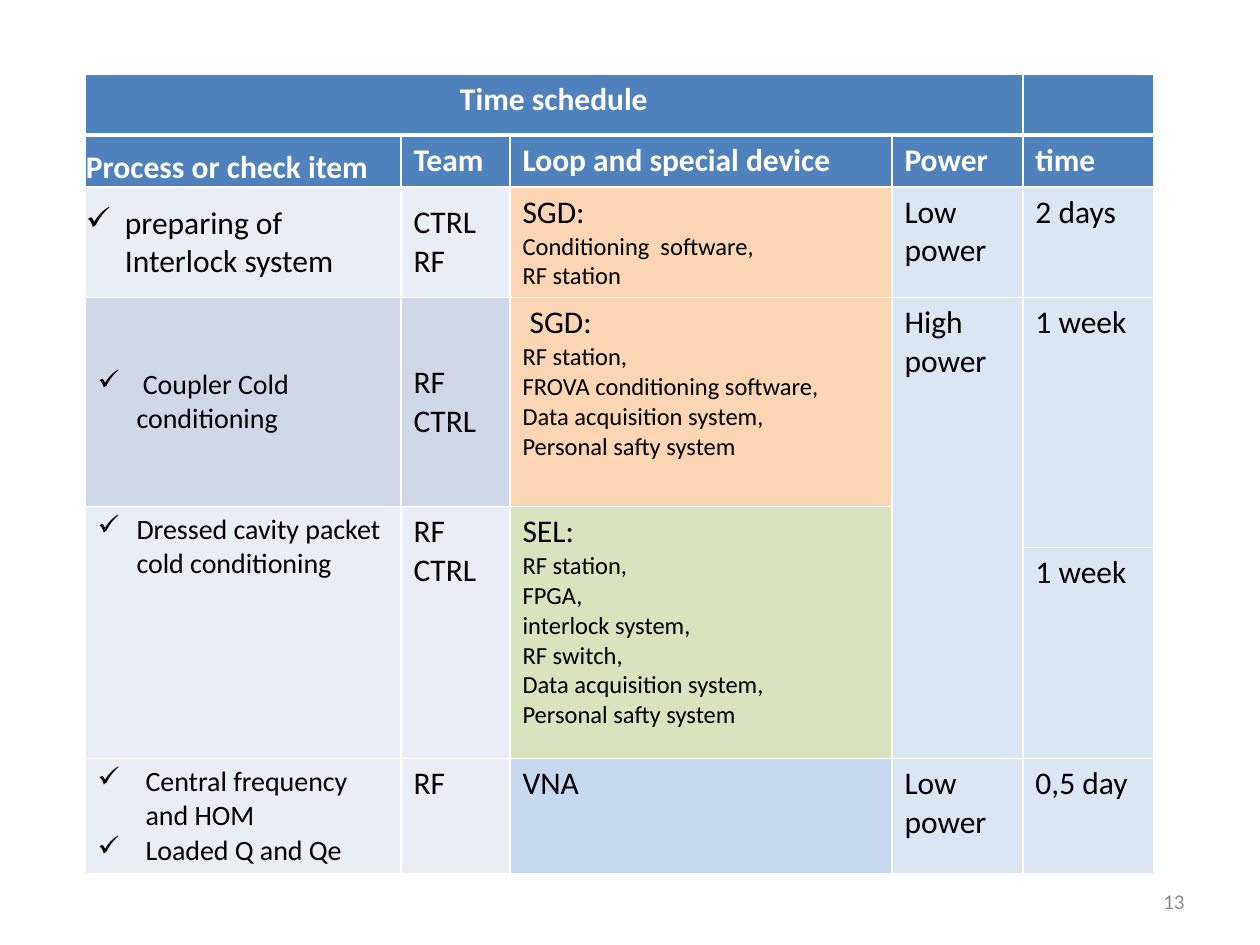
import pptx
import pptx.dml.color
import pptx.enum.text
import pptx.oxml
import pptx.oxml.ns
import pptx.util
from dataclasses import dataclass

PX = 914400 // 126
TOP, MID, BASE = (pptx.enum.text.MSO_ANCHOR.TOP, pptx.enum.text.MSO_ANCHOR.MIDDLE,
                  pptx.enum.text.MSO_ANCHOR.BOTTOM)
LEFT, MIDX, RIGHT = (pptx.enum.text.PP_ALIGN.LEFT, pptx.enum.text.PP_ALIGN.CENTER,
                     pptx.enum.text.PP_ALIGN.RIGHT)


@dataclass
class Theme:
    font: str = "Calibri"
    white: str = "FFFFFF"
    black: str = "000000"
    gray: str = "8C8C8C"
    head: str = "4F81BD"
    pale: str = "E9EDF4"
    band: str = "D0D8E8"
    peach: str = "FCD5B5"
    green: str = "D7E4BD"
    sky: str = "C6D9F1"
    ice: str = "DCE6F2"
    large: int = 18
    medium: int = 16
    small: int = 14
    tiny: int = 12


theme = Theme()


def write(frame, text, size=theme.large, rest=None, color=theme.black,
          bold=False, align=LEFT, hang=0):
    frame.word_wrap = True
    for i, line in enumerate(text.split("\n")):
        para = frame.paragraphs[0] if i == 0 else frame.add_paragraph()
        para.alignment = align
        run = para.add_run()
        run.text = line
        run.font.name = theme.font
        run.font.size = pptx.util.Pt(rest if rest and i else size)
        run.font.bold = bold
        run.font.color.rgb = pptx.dml.color.RGBColor.from_string(color)
        if hang:
            props = para._p.get_or_add_pPr()
            props.set("marL", str(hang * PX))
            props.set("indent", str(-hang * PX))
            mark = pptx.oxml.ns.qn("a:buChar")
            props.append(props.makeelement(mark, {"char": "✓"}))


def edge(cell, side, width):
    ns = pptx.oxml.ns.nsdecls("a")
    line = pptx.oxml.parse_xml(
        f'<a:{side} {ns} w="{pptx.util.Pt(width)}"><a:solidFill>'
        f'<a:srgbClr val="{theme.white}"/></a:solidFill></a:{side}>')
    cell._tc.get_or_add_tcPr().append(line)


deck = pptx.Presentation()
deck.slide_width, deck.slide_height = pptx.util.Inches(10), pptx.util.Inches(7.5)
slide = deck.slides.add_slide(deck.slide_layouts[6])

cols = [316, 109, 382, 131, 131]
rows = [61, 52, 110, 209, 41, 211, 115]
frame = slide.shapes.add_table(len(rows), len(cols), 85 * PX, 74 * PX,
                               sum(cols) * PX, sum(rows) * PX)
table = frame.table
table.first_row = table.horz_banding = False
for col, width in zip(table.columns, cols):
    col.width = width * PX
for row, height in zip(table.rows, rows):
    row.height = height * PX

spans = [(0, 0, 0, 3), (3, 3, 5, 3), (3, 4, 4, 4),
         (4, 0, 5, 0), (4, 1, 5, 1), (4, 2, 5, 2)]
for r, c, last, end in spans:
    table.cell(r, c).merge(table.cell(last, end))

fills = [[theme.head] * 5, [theme.head] * 5]
for first, loop in [(theme.pale, theme.peach), (theme.band, theme.peach),
                    (theme.pale, theme.green), (theme.pale, theme.green),
                    (theme.pale, theme.sky)]:
    fills.append([first, first, loop, theme.ice, theme.ice])

for r, shades in enumerate(fills):
    for c, shade in enumerate(shades):
        cell = table.cell(r, c)
        for side in ("lnL", "lnR", "lnT", "lnB"):
            thick = (r, side) in [(0, "lnB"), (1, "lnT")]
            edge(cell, side, 3 if thick else 1)
        cell.fill.solid()
        cell.fill.fore_color.rgb = pptx.dml.color.RGBColor.from_string(shade)

head = dict(color=theme.white, bold=True)
write(table.cell(0, 0).text_frame, "Time schedule", align=MIDX, **head)
titles = ["Process or check item", "Team", "Loop and special device", "Power", "time"]
for c, text in enumerate(titles):
    write(table.cell(1, c).text_frame, text, **head)

steps = [
    (2, "preparing of Interlock system", theme.large, 39, MID),
    (3, " Coupler Cold conditioning", theme.medium, 39, MID),
    (4, "Dressed cavity packet cold conditioning", theme.medium, 39, TOP),
    (6, "Central frequency and HOM\nLoaded Q and Qe", theme.medium, 48, TOP),
]
for r, text, size, hang, anchor in steps:
    write(table.cell(r, 0).text_frame, text, size=size, hang=hang)
    table.cell(r, 0).vertical_anchor = anchor

teams = [(2, "CTRL\nRF", MID), (3, "RF\nCTRL", MID), (4, "RF\nCTRL", TOP), (6, "RF", TOP)]
for r, text, anchor in teams:
    write(table.cell(r, 1).text_frame, text)
    table.cell(r, 1).vertical_anchor = anchor

loops = [
    (2, "SGD:\nConditioning  software,\nRF station"),
    (3, " SGD:\nRF station,\nFROVA conditioning software,\n"
        "Data acquisition system,\nPersonal safty system"),
    (4, "SEL:\nRF station,\nFPGA,\ninterlock system,\nRF switch,\n"
        "Data acquisition system,\nPersonal safty system"),
    (6, "VNA"),
]
for r, text in loops:
    write(table.cell(r, 2).text_frame, text, rest=theme.small)

for r, text in [(2, "Low\npower"), (3, "High\npower"), (6, "Low power")]:
    write(table.cell(r, 3).text_frame, text)
for r, text in [(2, "2 days"), (3, "1 week"), (5, "1 week"), (6, "0,5 day")]:
    write(table.cell(r, 4).text_frame, text)

table.cell(1, 0).vertical_anchor = BASE
for r in (1, 2):
    cell = table.cell(r, 0)
    cell.margin_left = cell.margin_right = cell.margin_top = PX
    cell.margin_bottom = 0

box = slide.shapes.add_textbox(903 * PX, 876 * PX, 294 * PX, 50 * PX)
box.text_frame.vertical_anchor = MID
write(box.text_frame, "13", size=theme.tiny, color=theme.gray, align=RIGHT)

deck.save("out.pptx")
